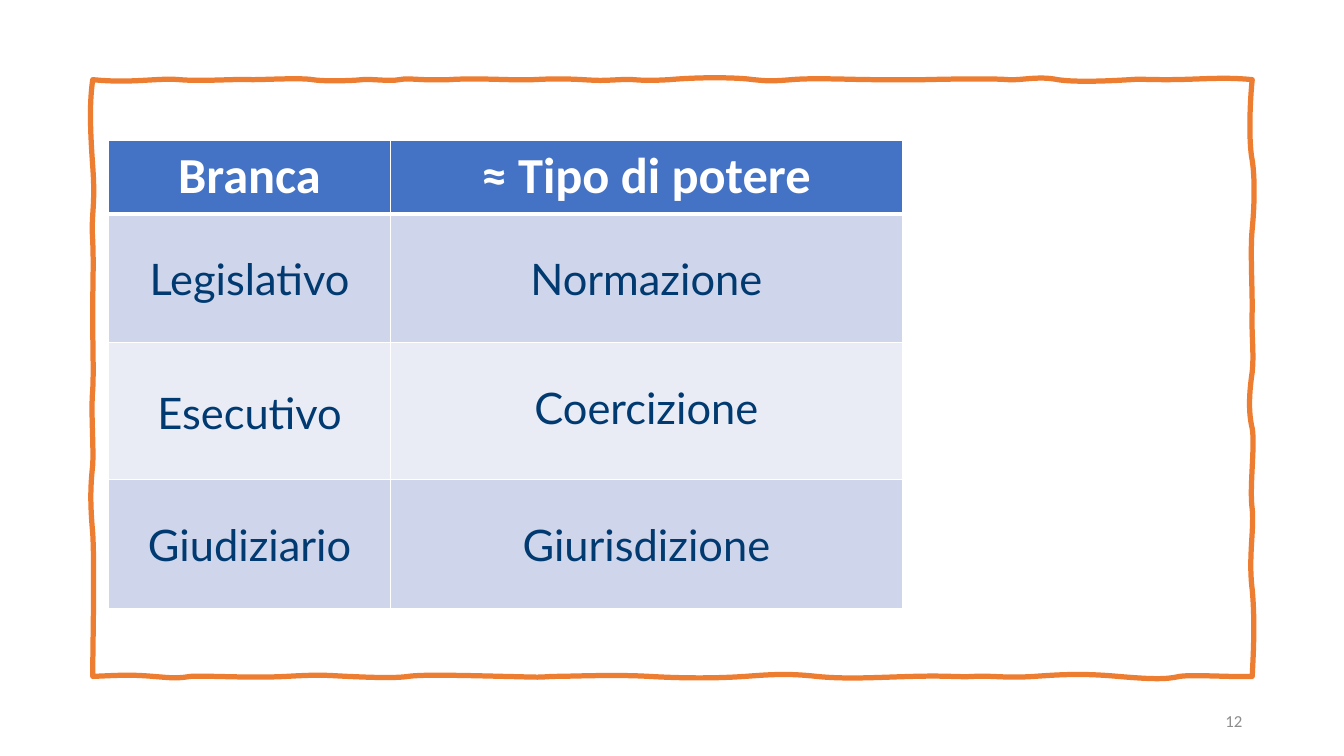
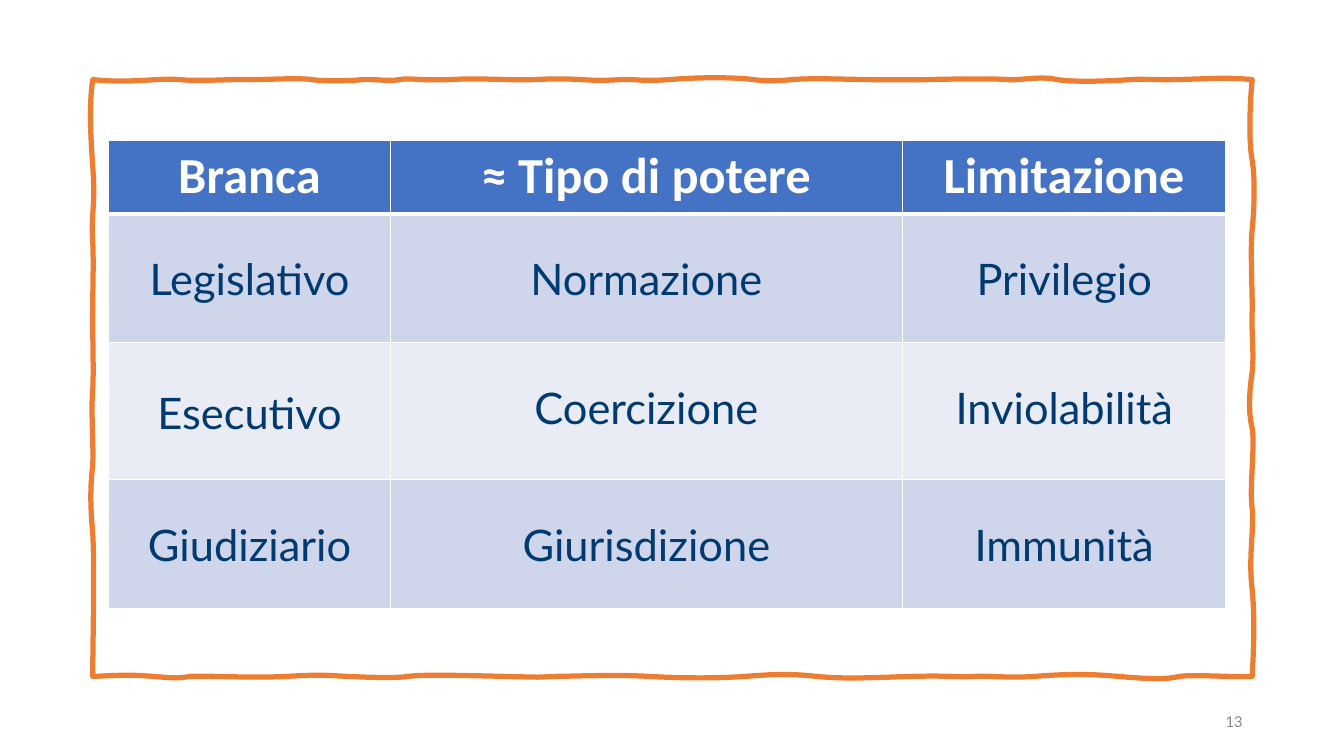
from lxml.etree import SubElement
from pptx import Presentation
from pptx.dml.color import RGBColor
from pptx.enum.text import MSO_ANCHOR, PP_ALIGN
from pptx.oxml import parse_xml
from pptx.oxml.ns import nsdecls, qn
from pptx.util import Pt

SCALE = 9144
SLIDE_SIZE = (1333, 750)
FIRST_NUMBER = 12
LEFT, TOP, RIGHT, BOTTOM = 92, 79, 1242, 671

BOTTOM_WAVES = [
    (117, -1, 128, -2, 152), (176, 2, 175, 2, 189), (204, -1, 249, 2, 284),
    (319, -2, 323, -1, 345), (367, 1, 392, 2, 405), (418, -2, 458, -1, 500),
    (542, 1, 530, 1, 549), (567, 0, 609, -2, 644), (678, 2, 711, 2, 739),
    (766, -2, 782, -3, 810), (839, 3, 869, 1, 905), (942, -1, 950, 1, 966),
    (982, -1, 998, 2, 1026), (1054, -2, 1075, -3, 1109),
    (1144, 3, 1157, 3, 1170), (1183, -2, 1226, 1, RIGHT),
]
RIGHT_WAVES = [
    (650, 1, 618, 3, 585), (553, -4, 526, 2, 505), (484, -3, 442, 3, 425),
    (409, -4, 389, -3, 369), (349, 2, 332, -1, 307), (282, 0, 247, -2, 227),
    (207, 2, 178, 3, 159), (139, -4, 97, -2, TOP),
]
TOP_WAVES = [
    (1212, -3, 1189, 0, 1158), (1128, 0, 1136, -1, 1121),
    (1105, 1, 1068, 3, 1049), (1030, -4, 1012, 1, 1000),
    (989, -1, 957, -1, 917), (877, 0, 890, 0, 868), (845, 0, 807, -2, 785),
    (762, 2, 759, 1, 747), (735, -2, 698, -3, 664), (629, 2, 634, -1, 615),
    (595, 1, 595, 1, 578), (560, -1, 548, -1, 529), (509, 1, 476, -2, 445),
    (414, 1, 407, -2, 396), (386, 2, 368, -1, 359), (351, 1, 322, 2, 310),
    (298, -2, 264, 0, 250), (236, -1, 200, 2, 178), (156, -2, 131, 4, LEFT),
]
LEFT_WAVES = [
    (100, -3, 123, -3, 165), (206, 3, 212, -2, 239), (265, 1, 276, 0, 313),
    (349, 0, 367, 1, 387), (407, -2, 441, 1, 461), (480, -2, 496, -3, 529),
    (562, 2, 641, 0, BOTTOM),
]

COLUMNS = [
    (279, ["Branca", "Legislativo", "Esecutivo", "Giudiziario"]),
    (508, ["≈ Tipo di potere", "Normazione", "Coercizione", "Giurisdizione"]),
    (321, ["Limitazione", "Privilegio", "Inviolabilità", "Immunità"]),
]
ROW_HEIGHTS = [73, 128, 136, 128]


def px(length):
    """Turn px into EMU."""
    return round(length * SCALE)


def color(value):
    """Turn a hex string into a colour."""
    return RGBColor.from_string(value)


def frame_curves():
    """List the two control points and the end of each curve in px."""
    curves = []
    edges = [(BOTTOM_WAVES, BOTTOM, True), (RIGHT_WAVES, RIGHT, False),
             (TOP_WAVES, TOP, True), (LEFT_WAVES, LEFT, False)]
    for waves, base, horizontal in edges:
        for first, first_offset, second, second_offset, end in waves:
            points = [(first, base + first_offset), (second, base + second_offset), (end, base)]
            curves.append(points if horizontal else [(x, y) for y, x in points])
    return curves


class Deck:
    """Hold the shared style and the current slide."""

    ORANGE, WHITE, GRAY, NAVY = "ED7D31", "FFFFFF", "8C8C8C", "003A70"
    HEADER, BANDS = "4472C4", ("E9EBF5", "CFD5EA")

    def __init__(self):
        """Start a presentation with its size and numbering."""
        self.presentation = Presentation()
        self.presentation.slide_width, self.presentation.slide_height = map(px, SLIDE_SIZE)
        self.presentation.element.set("firstSlideNum", str(FIRST_NUMBER))
        self.slide = None

    def add_slide(self):
        """Add a slide with the frame and the number."""
        self.slide = self.presentation.slides.add_slide(self.presentation.slide_layouts[6])
        self.add_frame()
        self.add_number()

    def style(self, paragraph, size, name, hex_color, alignment, bold=False):
        """Format one paragraph."""
        paragraph.alignment = alignment
        font = paragraph.font
        font.size, font.name, font.bold = Pt(size), name, bold
        font.color.rgb = color(hex_color)

    def add_frame(self):
        """Draw the wavy frame."""
        curves = frame_curves()
        builder = self.slide.shapes.build_freeform(px(LEFT), px(BOTTOM))
        builder.add_line_segments([(px(x), px(y)) for *_, (x, y) in curves], close=True)
        shape = builder.convert_to_shape()
        segments = list(shape._element.iter(qn("a:lnTo")))
        for segment, (*controls, _) in zip(segments, curves):
            segment.tag = qn("a:cubicBezTo")
            for index, (x, y) in enumerate(controls):
                segment.insert(index, parse_xml(
                    f'<a:pt {nsdecls("a")} x="{px(x - LEFT)}" y="{px(y - TOP)}"/>'))
        shape.shadow.inherit = False
        shape.fill.background()
        shape.line.color.rgb = color(self.ORANGE)
        shape.line.width = Pt(3.75)

    def add_number(self):
        """Write the slide number as a field."""
        box = self.slide.shapes.add_textbox(*map(px, (942, 695, 300, 40)))
        frame = box.text_frame
        frame.word_wrap = True
        frame.vertical_anchor = MSO_ANCHOR.MIDDLE
        paragraph = frame.paragraphs[0]
        self.style(paragraph, 12, "Calibri", self.GRAY, PP_ALIGN.RIGHT)
        field = SubElement(paragraph._p, qn("a:fld"), type="slidenum",
                           id="{B6F15528-21DE-4FAA-801E-634DDDAF4B2B}")
        SubElement(field, qn("a:rPr"), lang="it-IT")
        number = FIRST_NUMBER + len(self.presentation.slides) - 1
        SubElement(field, qn("a:t")).text = str(number)

    def add_borders(self, cell, top, bottom):
        """Give a cell white borders."""
        properties = cell._tc.get_or_add_tcPr()
        for index, (side, width) in enumerate(zip("LRTB", (1, 1, top, bottom))):
            properties.insert(index, parse_xml(
                f'<a:ln{side} {nsdecls("a")} w="{Pt(width)}"><a:solidFill>'
                f'<a:srgbClr val="{self.WHITE}"/></a:solidFill></a:ln{side}>'))

    def add_table(self, columns):
        """Add the table of powers with the given columns."""
        width = sum(column_width for column_width, _ in columns)
        bounds = map(px, (108, 139, width, sum(ROW_HEIGHTS)))
        table = self.slide.shapes.add_table(len(ROW_HEIGHTS), len(columns), *bounds).table
        for row, height in zip(table.rows, ROW_HEIGHTS):
            row.height = px(height)
        for column, (column_width, texts) in enumerate(columns):
            table.columns[column].width = px(column_width)
            for row, text in enumerate(texts):
                cell = table.cell(row, column)
                cell.text = text
                cell.fill.solid()
                paragraph = cell.text_frame.paragraphs[0]
                if row == 0:
                    cell.fill.fore_color.rgb = color(self.HEADER)
                    self.style(paragraph, 36, "Calibri", self.WHITE, PP_ALIGN.CENTER, True)
                else:
                    cell.fill.fore_color.rgb = color(self.BANDS[row % 2])
                    cell.margin_top = px(44 if text == "Esecutivo" else 39)
                    self.style(paragraph, 31, "Lato", self.NAVY, PP_ALIGN.CENTER)
                self.add_borders(cell, 3 if row == 1 else 1, 3 if row == 0 else 1)


def main():
    """Build both slides and save them."""
    deck = Deck()
    for column_count in (2, 3):
        deck.add_slide()
        deck.add_table(COLUMNS[:column_count])
    deck.presentation.save("out.pptx")


if __name__ == "__main__":
    main()
